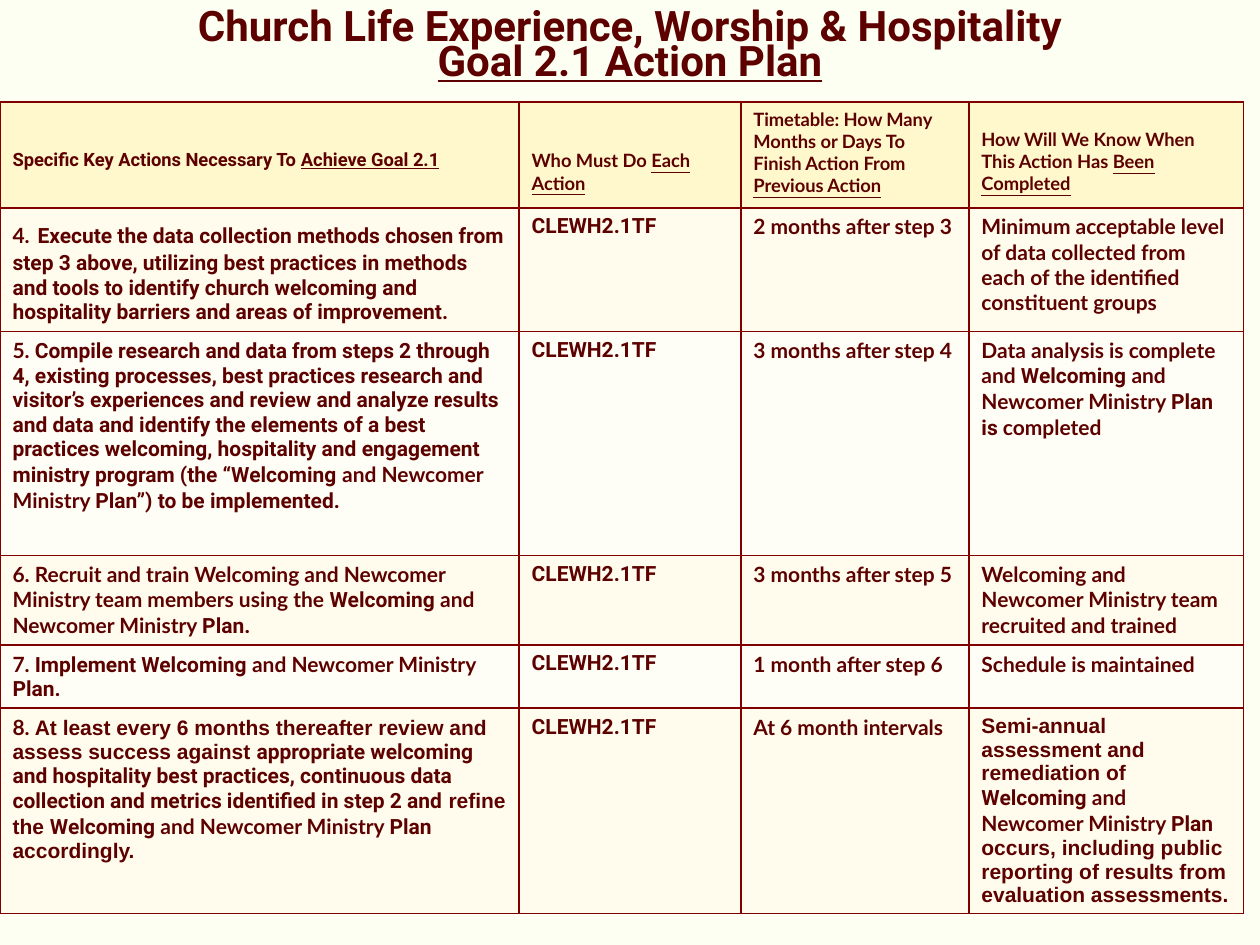
from lxml.etree import SubElement
from pptx import Presentation
from pptx.dml.color import RGBColor
from pptx.enum.text import MSO_ANCHOR, MSO_AUTO_SIZE, PP_ALIGN
from pptx.oxml.ns import qn
from pptx.util import Inches, Pt

IVORY = RGBColor(0xFE, 0xFF, 0xF3)
HEADER_FILL = RGBColor(0xFF, 0xF8, 0xCD)
ROW_FILLS = [RGBColor(0xFF, 0xFC, 0xED), RGBColor(0xFF, 0xFE, 0xF6)]
MAROON = RGBColor(0x5D, 0x01, 0x00)
BORDER = RGBColor(0x80, 0x00, 0x00)
LATO, ROBOTO, ARIAL = "Lato", "Roboto", "Arial"

COLUMN_WIDTHS = [4.12, 1.76, 1.81, 2.18]
ROW_HEIGHTS = [0.84, 0.98, 1.78, 0.71, 0.5, 1.63]
TABLE_TOP = 0.81

# Each header: plain words, underlined words, font, top margin
HEADERS = [
    ("Specific Key Actions Necessary To ", "Achieve Goal 2.1", ROBOTO, 0.38),
    ("Who Must Do ", "Each Action", LATO, 0.38),
    ("Timetable: How Many Months or Days To Finish Action From ",
     "Previous Action", LATO, 0.05),
    ("How Will We Know When This Action Has ", "Been Completed", LATO, 0.21),
]

RESPONSIBLE = "CLEWH2.1TF"
WELCOMING = ("Welcoming ", ROBOTO)
NEWCOMER = ("and Newcomer Ministry ", LATO)

# Each step: action spans, timetable, completion spans
STEPS = [
    ([("4.", LATO), (" ", ROBOTO, 18),
      ("Execute the data collection methods chosen from step 3 above, utilizing "
       "best practices in methods and tools to identify church welcoming and "
       "hospitality barriers and areas of improvement.", ROBOTO)],
     "2 months after step 3",
     [("Minimum acceptable level of data collected from each of the identified "
       "constituent groups", LATO)]),
    ([("5. ", LATO),
      ("Compile research and data from steps 2 through 4, existing processes, best "
       "practices research and visitor’s experiences and review and analyze results "
       "and data and identify the elements of a best practices welcoming, "
       "hospitality and engagement ministry program (the “Welcoming ", ROBOTO),
      NEWCOMER, ("Plan”) to be implemented.", ROBOTO)],
     "3 months after step 4",
     [("Data analysis is complete and ", LATO), WELCOMING, NEWCOMER,
      ("Plan is", ROBOTO), (" completed", LATO)]),
    ([("6. Recruit and train Welcoming and Newcomer Ministry team members using "
       "the ", LATO), WELCOMING, NEWCOMER, ("Plan.", ROBOTO)],
     "3 months after step 5",
     [("Welcoming and Newcomer Ministry team recruited and trained", LATO)]),
    ([("7. ", LATO), ("Implement Welcoming ", ROBOTO), NEWCOMER, ("Plan.", ROBOTO)],
     "1 month after step 6",
     [("Schedule is maintained", LATO)]),
    ([("8.", LATO),
      (" At least every 6 months thereafter review and assess success against ",
       ARIAL),
      ("appropriate welcoming and hospitality best practices, continuous data "
       "collection and metrics identified in step 2 and", ROBOTO),
      (" refine the ", ARIAL), WELCOMING, NEWCOMER, ("Plan ", ROBOTO),
      ("accordingly.", ARIAL)],
     "At 6 month intervals",
     [("Semi-annual assessment and remediation of ", ARIAL), WELCOMING, NEWCOMER,
      ("Plan ", ROBOTO),
      ("occurs, including public reporting of results from evaluation assessments.",
       ARIAL)]),
]


def style_font(font, size):
    font.size = Pt(size)
    font.bold = True
    font.color.rgb = MAROON


def prepare_cell(cell, fill, size):
    """Give the cell its borders, fill and font; return its paragraph."""
    properties = cell._tc.get_or_add_tcPr()
    for side in ("a:lnL", "a:lnR", "a:lnT", "a:lnB"):
        line = SubElement(properties, qn(side), w=str(Pt(1)))
        solid = SubElement(line, qn("a:solidFill"))
        SubElement(solid, qn("a:srgbClr"), val=str(BORDER))
    cell.fill.solid()
    cell.fill.fore_color.rgb = fill
    para = cell.text_frame.paragraphs[0]
    style_font(para.font, size)
    return para


deck = Presentation()
deck.slide_width, deck.slide_height = Inches(10), Inches(7.5)
page = deck.slides.add_slide(deck.slide_layouts[5])
page.background.fill.solid()
page.background.fill.fore_color.rgb = IVORY

# Title
title = page.shapes.title
title.left, title.top = Inches(0.66), Inches(-0.24)
title.width, title.height = Inches(8.68), Inches(1.25)
title.text_frame.auto_size = MSO_AUTO_SIZE.NONE
title.text_frame.vertical_anchor = MSO_ANCHOR.MIDDLE
para = title.text_frame.paragraphs[0]
para.alignment = PP_ALIGN.CENTER
para.line_spacing = 0.7
style_font(para.font, 24)
para.font.name = ROBOTO
para.add_run().text = "Church Life Experience, Worship & Hospitality"
para.add_line_break()
goal = para.add_run()
goal.text = "Goal 2.1 Action Plan"
goal.font.underline = True

# Action plan table
table = page.shapes.add_table(
    len(ROW_HEIGHTS), len(COLUMN_WIDTHS), 0, Inches(TABLE_TOP),
    Inches(sum(COLUMN_WIDTHS)), Inches(sum(ROW_HEIGHTS))).table
table.first_row = False
table.horz_banding = False
for column, width in zip(table.columns, COLUMN_WIDTHS):
    column.width = Inches(width)
for row, height in zip(table.rows, ROW_HEIGHTS):
    row.height = Inches(height)

for column, (plain, underlined, font_name, top) in enumerate(HEADERS):
    cell = table.cell(0, column)
    cell.margin_top = Inches(top)
    cell.margin_right = Inches(0.2)
    para = prepare_cell(cell, HEADER_FILL, 10.5)
    para.font.name = font_name
    for text, underline in ((plain, False), (underlined, True)):
        span = para.add_run()
        span.text = text
        span.font.underline = underline

for row, (action, timetable, completion) in enumerate(STEPS, start=1):
    contents = [action, [(RESPONSIBLE, ROBOTO)], [(timetable, LATO)], completion]
    for column, spans in enumerate(contents):
        para = prepare_cell(table.cell(row, column), ROW_FILLS[(row - 1) % 2], 12)
        for text, font_name, *size in spans:
            span = para.add_run()
            span.text = text
            span.font.name = font_name
            if size:
                span.font.size = Pt(size[0])

deck.save("out.pptx")
